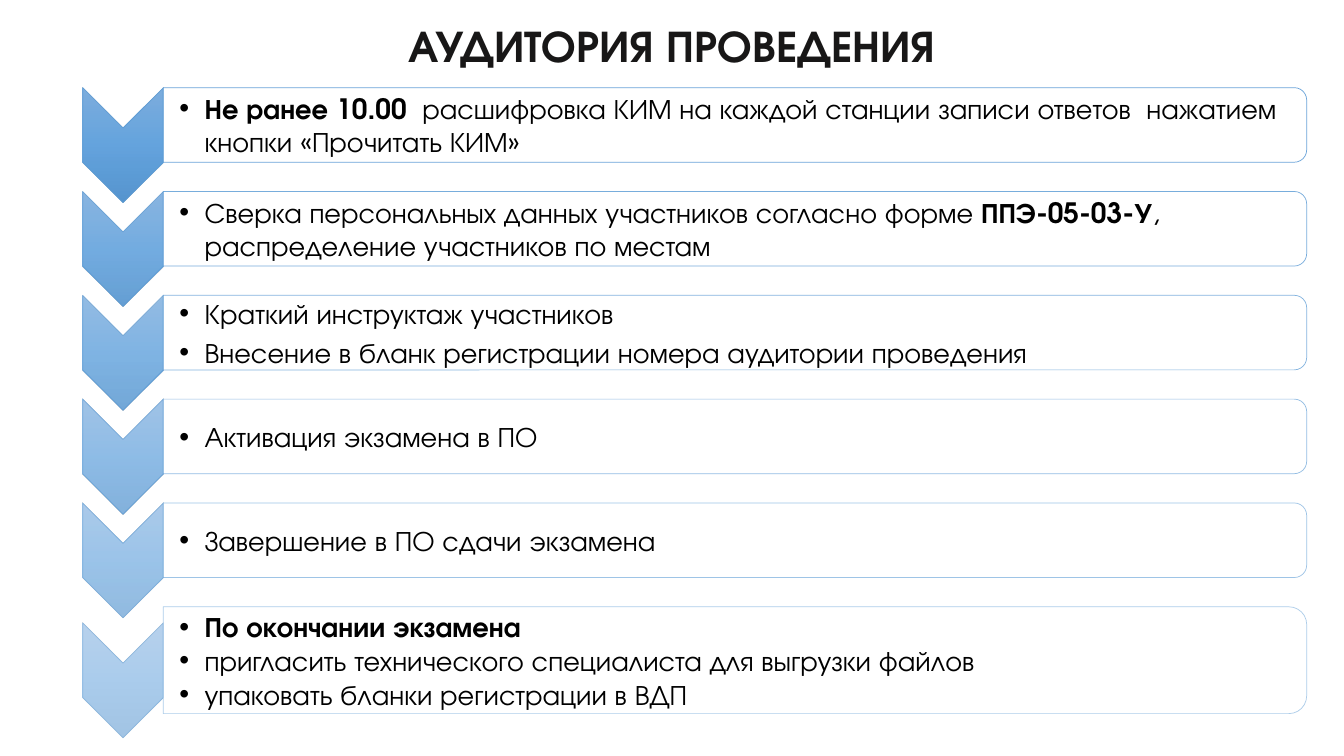
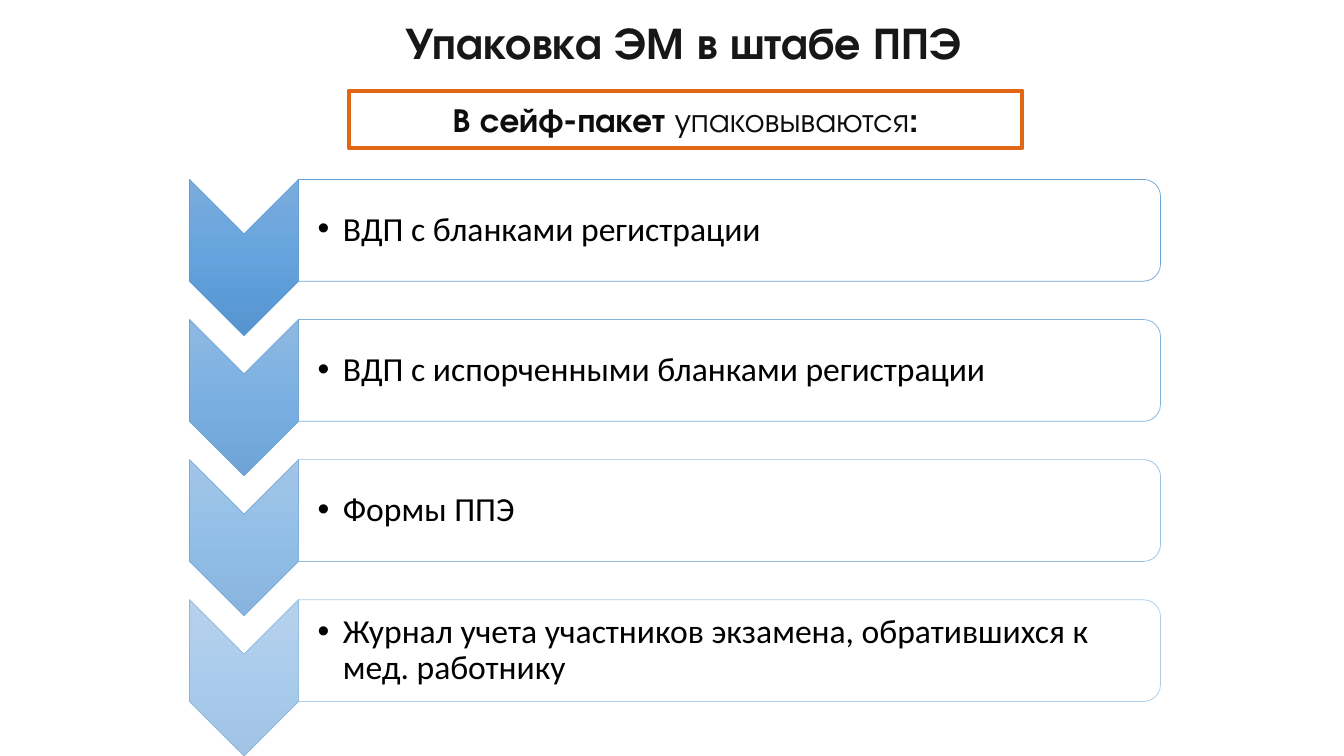
from copy import deepcopy
from dataclasses import dataclass

from lxml import etree
from pptx import Presentation
from pptx import util as u
from pptx.dml.color import RGBColor
from pptx.enum import shapes, text
from pptx.oxml.ns import qn


@dataclass(frozen=True)
class Theme:
    heading_font: str = "TeX Gyre Adventor"
    plain_font: str = "Calibri"
    title_size: int = 32
    large_size: int = 24
    list_size: int = 20
    title: str = "181717"
    body: str = "000000"
    callout: str = "0D0D0D"
    accent: str = "E26714"
    panel: str = "FFFFFF"
    outline: str = "5B9BD5"
    gradient: tuple = ("71A6DB", "559BDB", "448ACA")
    panel_opacity: float = 90
    first_opacity: float = 90
    last_opacity: float = 50


@dataclass(frozen=True)
class ListStyle:
    """Geometry (inches) and type of a vertical chevron list."""
    left: float
    top: float
    pitch: float
    arrow_width: float
    arrow_height: float
    panel_width: float
    panel_height: float
    inset: float
    font: str
    size: int
    line_spacing: float = 1.0


@dataclass(frozen=True)
class Step:
    paragraphs: tuple
    panel_height: float = 0
    space_after: float = 3.5


THEME = Theme()

EXAM_LIST = ListStyle(0.82, 0.87, 1.03, 0.8, 1.14, 11.34, 0.74, 0.16,
                      THEME.heading_font, THEME.list_size)
PACKING_LIST = ListStyle(1.88, 1.78, 1.39, 1.08, 1.55, 8.55, 1.01, 0.19,
                         THEME.plain_font, THEME.large_size, 0.9)

# Each paragraph is a tuple of (words, bold) runs.
EXAM_STEPS = (
    Step(((("Не ранее 10.00", True),
           ("  расшифровка КИМ на каждой станции записи ответов  "
            "нажатием кнопки «Прочитать КИМ»", False)),)),
    Step(((("Сверка персональных данных участников согласно форме ", False),
           ("ППЭ-05-03-У", True),
           (", распределение участников по местам", False)),)),
    Step(((("Краткий инструктаж участников", False),),
          (("Внесение в бланк регистрации номера аудитории проведения", False),))),
    Step(((("Активация экзамена в ПО", False),),)),
    Step(((("Завершение в ПО сдачи экзамена", False),),)),
    Step(((("По окончании экзамена", True),),
          (("пригласить технического специалиста для выгрузки файлов", False),),
          (("упаковать бланки регистрации в ВДП", False),)),
         panel_height=1.06, space_after=0),
)
PACKING_STEPS = tuple(
    Step((((words, False),),)) for words in (
        "ВДП с бланками регистрации",
        "ВДП с испорченными бланками регистрации",
        "Формы ППЭ",
        "Журнал учета участников экзамена, обратившихся к мед. работнику",
    ))


def add_runs(paragraph, runs, font, size, color):
    for words, bold in runs:
        run = paragraph.add_run()
        run.text = words
        run.font.name = font
        run.font.size = u.Pt(size)
        run.font.bold = bold
        run.font.color.rgb = RGBColor.from_string(color)


def add_title(slide, words, left, top, width):
    title = slide.shapes.title
    title.left, title.top = u.Inches(left), u.Inches(top)
    title.width, title.height = u.Inches(width), u.Inches(0.64)
    frame = title.text_frame
    frame.auto_size = text.MSO_AUTO_SIZE.NONE
    frame.vertical_anchor = text.MSO_ANCHOR.TOP
    frame.paragraphs[0].alignment = text.PP_ALIGN.CENTER
    add_runs(frame.paragraphs[0], [(words, True)],
             THEME.heading_font, THEME.title_size, THEME.title)


def set_opacity(element, percent):
    for color in element.iter(qn("a:srgbClr")):
        etree.SubElement(color, qn("a:alpha"), val=str(round(percent * 1000)))


def add_turned_shape(slide, preset, left, top, width, height, opacity):
    """Add a shape turned 90° clockwise; the box given is the one it shows."""
    shape = slide.shapes.add_shape(
        preset,
        u.Inches(left + (width - height) / 2),
        u.Inches(top + (height - width) / 2),
        u.Inches(height), u.Inches(width))
    shape.rotation = 90
    shape.shadow.inherit = False
    shape.line.color.rgb = RGBColor.from_string(THEME.outline)
    shape.line.width = u.Pt(0.5)
    set_opacity(shape.line._get_or_add_ln(), opacity)
    return shape


def fill_gradient(shape, opacity):
    """Fill from the shape's own left, which shows at the top once turned."""
    shape.fill.gradient()
    shape.fill.gradient_angle = 0
    gradient = shape._element.spPr.find(qn("a:gradFill"))
    stop_list = gradient.find(qn("a:gsLst"))
    stop_list.insert(1, deepcopy(stop_list[0]))
    for i, (stop, color) in enumerate(zip(shape.fill.gradient_stops, THEME.gradient)):
        stop.position = i / (len(THEME.gradient) - 1)
        stop.color.rgb = RGBColor.from_string(color)
    set_opacity(gradient, opacity)


def set_bullet(paragraph):
    properties = paragraph._p.get_or_add_pPr()
    indent = u.Inches(0.25)
    properties.set("marL", str(indent))
    properties.set("indent", str(-indent))
    etree.SubElement(properties, qn("a:buFont"), typeface="Arial")
    etree.SubElement(properties, qn("a:buChar"), char="•")


def add_bullets(slide, step, style, left, top, height):
    box = slide.shapes.add_textbox(u.Inches(left), u.Inches(top),
                                   u.Inches(style.panel_width - 0.04), u.Inches(height))
    frame = box.text_frame
    frame.word_wrap = True
    frame.vertical_anchor = text.MSO_ANCHOR.MIDDLE
    frame.margin_left = u.Inches(style.inset)
    frame.margin_top = frame.margin_right = frame.margin_bottom = u.Inches(0.01)
    for i, runs in enumerate(step.paragraphs):
        paragraph = frame.add_paragraph() if i else frame.paragraphs[0]
        paragraph.line_spacing = style.line_spacing
        paragraph.space_after = u.Pt(step.space_after)
        set_bullet(paragraph)
        add_runs(paragraph, runs, style.font, style.size, THEME.body)


def add_chevron_list(slide, steps, style):
    fade = (THEME.first_opacity - THEME.last_opacity) / (len(steps) - 1)
    panel_left = style.left + style.arrow_width
    for i, step in enumerate(steps):
        opacity = THEME.first_opacity - i * fade
        top = style.top + i * style.pitch
        height = step.panel_height or style.panel_height
        arrow_top = top + (height - style.panel_height) / 2
        arrow = add_turned_shape(slide, shapes.MSO_SHAPE.CHEVRON, style.left, arrow_top,
                                 style.arrow_width, style.arrow_height, opacity)
        fill_gradient(arrow, opacity)
        panel = add_turned_shape(slide, shapes.MSO_SHAPE.ROUND_2_SAME_RECTANGLE,
                                 panel_left, top, style.panel_width, height, opacity)
        panel.fill.solid()
        panel.fill.fore_color.rgb = RGBColor.from_string(THEME.panel)
        set_opacity(panel._element.spPr.find(qn("a:solidFill")), THEME.panel_opacity)
        add_bullets(slide, step, style, panel_left, top, height)


def add_callout(slide, runs, left, top, width, height):
    callout = slide.shapes.add_shape(
        shapes.MSO_SHAPE.RECTANGLE,
        u.Inches(left), u.Inches(top), u.Inches(width), u.Inches(height))
    callout.shadow.inherit = False
    callout.fill.background()
    callout.line.color.rgb = RGBColor.from_string(THEME.accent)
    callout.line.width = u.Pt(3)
    frame = callout.text_frame
    frame.vertical_anchor = text.MSO_ANCHOR.MIDDLE
    frame.paragraphs[0].alignment = text.PP_ALIGN.CENTER
    add_runs(frame.paragraphs[0], runs, THEME.heading_font, THEME.large_size, THEME.callout)


def main():
    deck = Presentation()
    deck.slide_width, deck.slide_height = u.Inches(13.33), u.Inches(7.5)
    title_only = deck.slide_layouts[5]

    exam_room = deck.slides.add_slide(title_only)
    add_title(exam_room, "АУДИТОРИЯ ПРОВЕДЕНИЯ", 0.38, 0.13, 12.57)
    add_chevron_list(exam_room, EXAM_STEPS, EXAM_LIST)

    packing = deck.slides.add_slide(title_only)
    add_title(packing, "Упаковка ЭМ в штабе ППЭ", 3.64, 0.1, 6.28)
    add_callout(packing, [("В сейф-пакет ", True), ("упаковываются", False), (":", True)],
                3.46, 0.9, 6.68, 0.57)
    add_chevron_list(packing, PACKING_STEPS, PACKING_LIST)

    deck.save("out.pptx")


if __name__ == "__main__":
    main()
